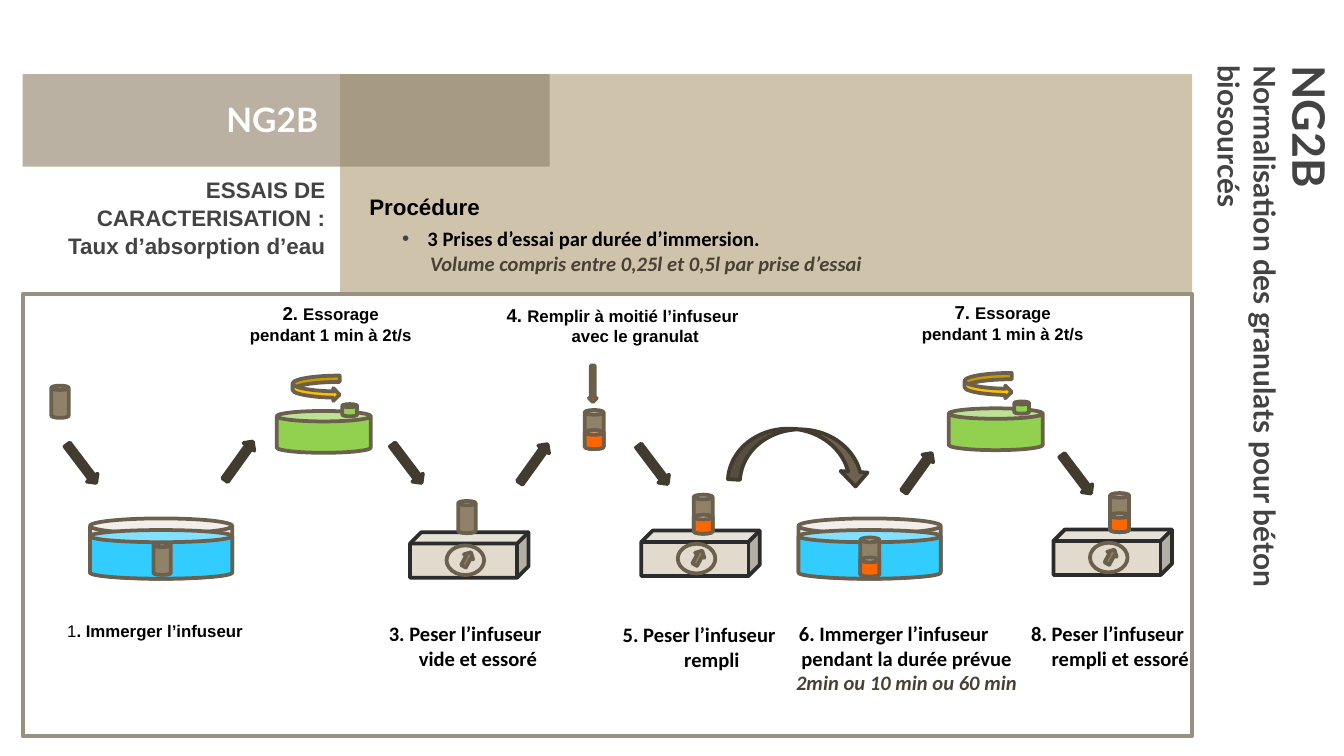
from lxml.etree import SubElement
from pptx import Presentation
from pptx.dml.color import RGBColor
from pptx.enum.shapes import MSO_SHAPE as SHAPE
from pptx.enum.text import MSO_ANCHOR as ANCHOR, PP_ALIGN as ALIGN
from pptx.oxml.ns import qn
from pptx.util import Cm, Pt

# Colours
TAN, WHITE, DARK, BLACK, GREY = "CFC3AC", "FFFFFF", "423B2F", "000000", "434343"
METAL, EDGE, ORANGE, GREEN = "908269", "6B604E", "FF6600", "92D050"

# Text styles: size, font, colour, bold, italic
STYLES = {
    "banner": (18, "Lato", WHITE, True, False),
    "side_big": (24, "Lato", GREY, True, False),
    "side": (16, "Lato", GREY, True, False),
    "subject": (12, "Arial", GREY, True, False),
    "heading": (12, "Arial", BLACK, True, False),
    "number": (10, "Arial", BLACK, True, False),
    "small": (9, "Arial", BLACK, True, False),
    "plain": (9, "Arial", BLACK, False, False),
    "step": (11, "Calibri", BLACK, True, False),
    "note": (11, "Calibri", "484134", True, True),
}

# Captions in cm: left, top, width, alignment, hanging indent, lines of runs
SPIN = [("Essorage", "small")], [("pendant 1 min à 2t/s", "small")]
CAPTIONS = [
    (1.02, 11.61, 4.2, ALIGN.LEFT, False,
     [[("1", "plain"), (". Immerger l’infuseur", "small")]]),
    (3.86, 5.58, 4.78, ALIGN.CENTER, False, [[("2. ", "number")] + SPIN[0], SPIN[1]]),
    (5.03, 11.61, 7.04, ALIGN.CENTER, True,
     [[("3. Peser l’infuseur", "step")], [("vide et essoré", "step")]]),
    (8.61, 5.61, 5.82, ALIGN.CENTER, True,
     [[("4. ", "number"), ("Remplir à moitié l’infuseur avec le granulat", "small")]]),
    (9.45, 11.63, 7.04, ALIGN.CENTER, True,
     [[("5. Peser l’infuseur", "step")], [("rempli", "step")]]),
    (13.13, 11.61, 7.04, ALIGN.CENTER, True,
     [[("6. Immerger l’infuseur", "step")], [("pendant la durée prévue", "step")],
      [("2min ou 10 min ou 60 min", "note")]]),
    (16.56, 5.56, 4.78, ALIGN.CENTER, False, [[("7. ", "number")] + SPIN[0], SPIN[1]]),
    (17.17, 11.61, 7.04, ALIGN.CENTER, True,
     [[("8. Peser l’infuseur", "step")], [("rempli et essoré", "step")]]),
]

# Equipment positions in cm: left, top
BATHS = [(1.7, 9.8), (15.09, 9.8)]
SPINNERS = [(5.23, 7.77), (17.93, 7.72)]
SCALES = [(7.75, 10.06), (12.12, 10.03), (19.91, 10.01)]
EMPTY_INFUSERS = [(0.97, 7.29), (8.66, 9.47), (2.9, 10.26)]
FILLED_INFUSERS = [(11.05, 7.75), (13.11, 9.35), (20.98, 9.32), (16.26, 10.16)]
ARROWS_DOWN = [(1.42, 8.31), (7.57, 8.31), (12.22, 8.33), (20.22, 8.51)]
ARROWS_UP = [(4.39, 8.26), (9.96, 8.31), (17.22, 8.48)]

# Parts of each piece: shape, offset x, offset y, width, height, fill, line, rotation
BATH = [(SHAPE.CAN, 0, 0, 2.69, 1.14, "EAE5DD", EDGE, 0),
        (SHAPE.CAN, 0, 0.22, 2.69, 0.92, "33CCFF", EDGE, 0)]
SPINNER = [(SHAPE.CAN, 0, 0, 1.78, 0.79, GREEN, EDGE, 0),
           (SHAPE.CAN, 1.24, -0.13, 0.28, 0.23, GREEN, EDGE, 0),
           (SHAPE.CURVED_RIGHT_ARROW, 0.3, -0.67, 0.89, 0.48, "FFC000", EDGE, 0)]
SCALE = [(SHAPE.CUBE, 0, 0, 2.24, 0.86, "E2DBCD", "2C2C2C", 0),
         (SHAPE.DOWN_ARROW, 0.98, 0.36, 0.2, 0.3, METAL, EDGE, 208.4),
         (SHAPE.OVAL, 0.69, 0.25, 0.71, 0.56, None, EDGE, 0)]
EMPTY = [(SHAPE.CAN, 0, 0, 0.33, 0.61, METAL, EDGE, 0)]
FILLED = [(SHAPE.CAN, 0, 0, 0.36, 0.74, METAL, EDGE, 0),
          (SHAPE.CAN, 0, 0.38, 0.36, 0.36, ORANGE, EDGE, 0)]
DOWN = [(SHAPE.DOWN_ARROW, 0, 0, 0.25, 0.91, DARK, DARK, 322.9)]
UP = [(SHAPE.DOWN_ARROW, 0, 0, 0.25, 0.9, DARK, DARK, 215.7)]

prs = Presentation()
prs.slide_width, prs.slide_height = Cm(25.4), Cm(14.29)
s = prs.slides.add_slide(prs.slide_layouts[5])


def rgb(value):
    return RGBColor.from_string(value)


def place(sp, x, y, w, h):
    sp.left, sp.top, sp.width, sp.height = Cm(x), Cm(y), Cm(w), Cm(h)


def add_shape(kind, x, y, w, h, fill, line=None, rotation=0):
    sp = s.shapes.add_shape(kind, Cm(x), Cm(y), Cm(w), Cm(h))
    sp.shadow.inherit = False
    sp.rotation = rotation
    if fill:
        sp.fill.solid()
        sp.fill.fore_color.rgb = rgb(fill)
    else:
        sp.fill.background()
    if line:
        sp.line.color.rgb = rgb(line)
        sp.line.width = Pt(2)
    else:
        sp.line.fill.background()
    return sp


def draw(parts, spots):
    for x, y in spots:
        for kind, dx, dy, w, h, fill, line, rotation in parts:
            add_shape(kind, x + dx, y + dy, w, h, fill, line, rotation)


def write(p, lines, align=ALIGN.LEFT, margin=0, first=0, bullet=None):
    p.alignment = align
    pPr = p._p.get_or_add_pPr()
    pPr.set("marL", str(Cm(margin)))
    pPr.set("indent", str(Cm(first)))
    if bullet:
        color = SubElement(SubElement(pPr, qn("a:buClr")), qn("a:srgbClr"))
        color.set("val", GREY)
        SubElement(pPr, qn("a:buFont")).set("typeface", "Arial")
        SubElement(pPr, qn("a:buChar")).set("char", bullet)
    for i, line in enumerate(lines):
        if i:
            p.add_line_break()
        for text, style in line:
            r = p.add_run()
            r.text = text
            size, r.font.name, color, r.font.bold, r.font.italic = STYLES[style]
            r.font.size = Pt(size)
            r.font.color.rgb = rgb(color)


def add_box(x, y, w, h, inset=0.13):
    sp = s.shapes.add_textbox(Cm(x), Cm(y), Cm(w), Cm(h))
    tf = sp.text_frame
    tf.word_wrap = True
    tf.margin_left = tf.margin_right = Cm(0.25)
    tf.margin_top = tf.margin_bottom = Cm(inset)
    return sp, tf


# Panels and banner
add_shape(SHAPE.RECTANGLE, 6.43, 1.4, 16.1, 12.07, TAN)
add_shape(SHAPE.RECTANGLE, 0.43, 5.56, 22.1, 8.36, WHITE, "99907F")
banner = add_shape(SHAPE.RECTANGLE, 0.43, 1.4, 9.96, 1.75, METAL)
fill_color = banner.element.spPr.find(qn("a:solidFill"))[0]
SubElement(fill_color, qn("a:alpha")).set("val", "62000")

title = s.shapes.title
place(title, 0.66, 1.63, 8.97, 1.24)
title.text_frame.vertical_anchor = ANCHOR.MIDDLE
write(title.text_frame.paragraphs[0], [[("NG2B", "banner")]], ALIGN.CENTER)
title.element.getparent().append(title.element)

# Vertical side heading
side, tf = add_box(17.74, 6.15, 12.7, 2.36, 0)
side.rotation = 90
write(tf.paragraphs[0], [[("NG2B", "side_big")],
                         [("Normalisation des granulats pour béton biosourcés", "side")]])

# Subject of the test
_, tf = add_box(0.48, 3.05, 5.92, 2.29, 0.25)
for i, text in enumerate(["ESSAIS DE CARACTERISATION :", "Taux d’absorption d’eau"]):
    p = tf.add_paragraph() if i else tf.paragraphs[0]
    write(p, [[(text, "subject")]], ALIGN.RIGHT)
    p.line_spacing = 1.05

# Procedure
_, tf = add_box(6.73, 3.53, 3, 0.75)
write(tf.paragraphs[0], [[("Procédure", "heading")]])
_, tf = add_box(6.86, 4.14, 12.7, 1.19)
write(tf.paragraphs[0], [[("3 Prises d’essai par durée d’immersion.", "step")]],
      margin=0.97, first=-0.48, bullet="•")
write(tf.add_paragraph(),
      [[("Volume compris entre 0,25l et 0,5l par prise d’essai", "note")]], margin=1.02)

# Equipment and arrows
for parts, spots in [(BATH, BATHS), (SPINNER, SPINNERS), (SCALE, SCALES),
                     (EMPTY, EMPTY_INFUSERS), (FILLED, FILLED_INFUSERS),
                     (DOWN, ARROWS_DOWN), (UP, ARROWS_UP)]:
    draw(parts, spots)
add_shape(SHAPE.DOWN_ARROW, 11.13, 6.91, 0.15, 0.69, ORANGE, EDGE)
transfer = add_shape(SHAPE.CURVED_RIGHT_ARROW, 14.61, 7.29, 1.02, 2.67,
                     "6C624F", DARK, 273.3)
transfer.element.spPr.find(qn("a:xfrm")).set("flipH", "1")
for i, value in enumerate([0.224, 0.5, 0.27]):
    transfer.adjustments[i] = value

# Step captions
for x, y, w, align, hanging, lines in CAPTIONS:
    _, tf = add_box(x, y, w, 0.4 + 0.45 * len(lines))
    margin, first = (0.97, -0.48) if hanging else (0, 0)
    write(tf.paragraphs[0], lines, align, margin, first)

prs.save("out.pptx")
